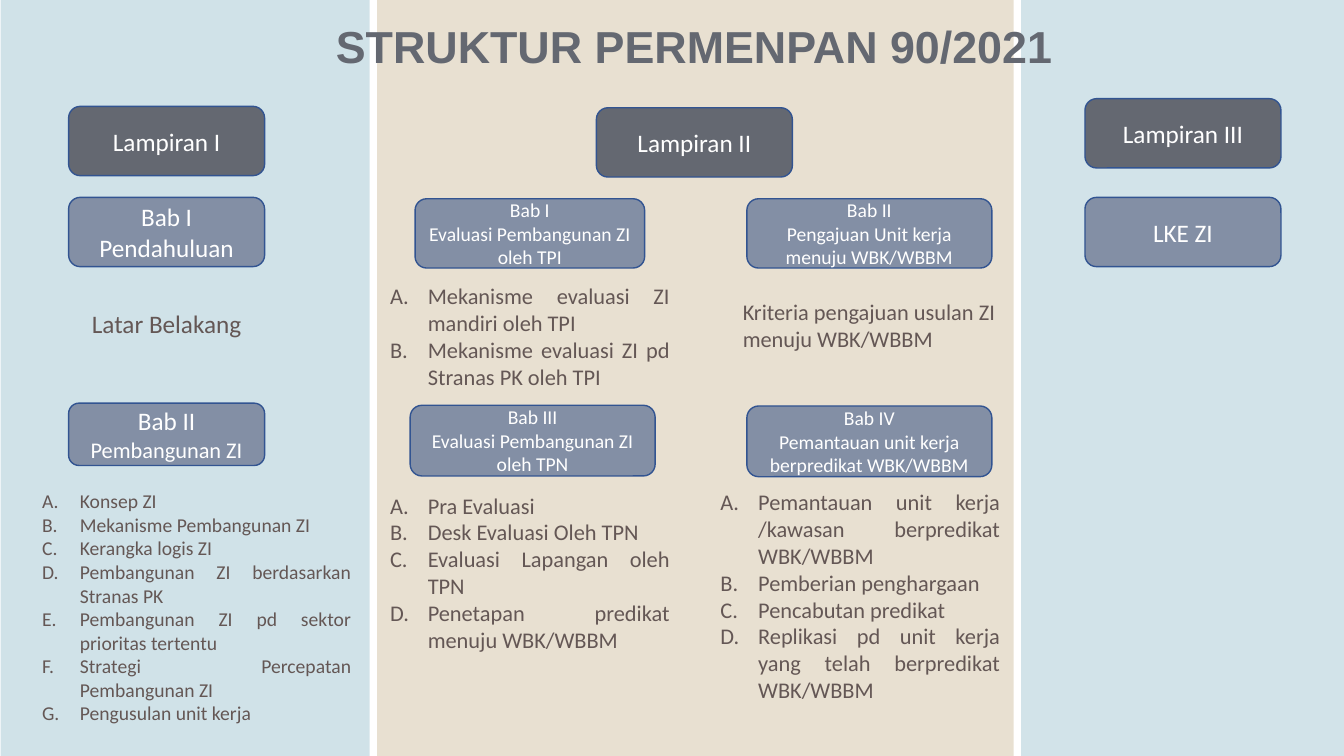
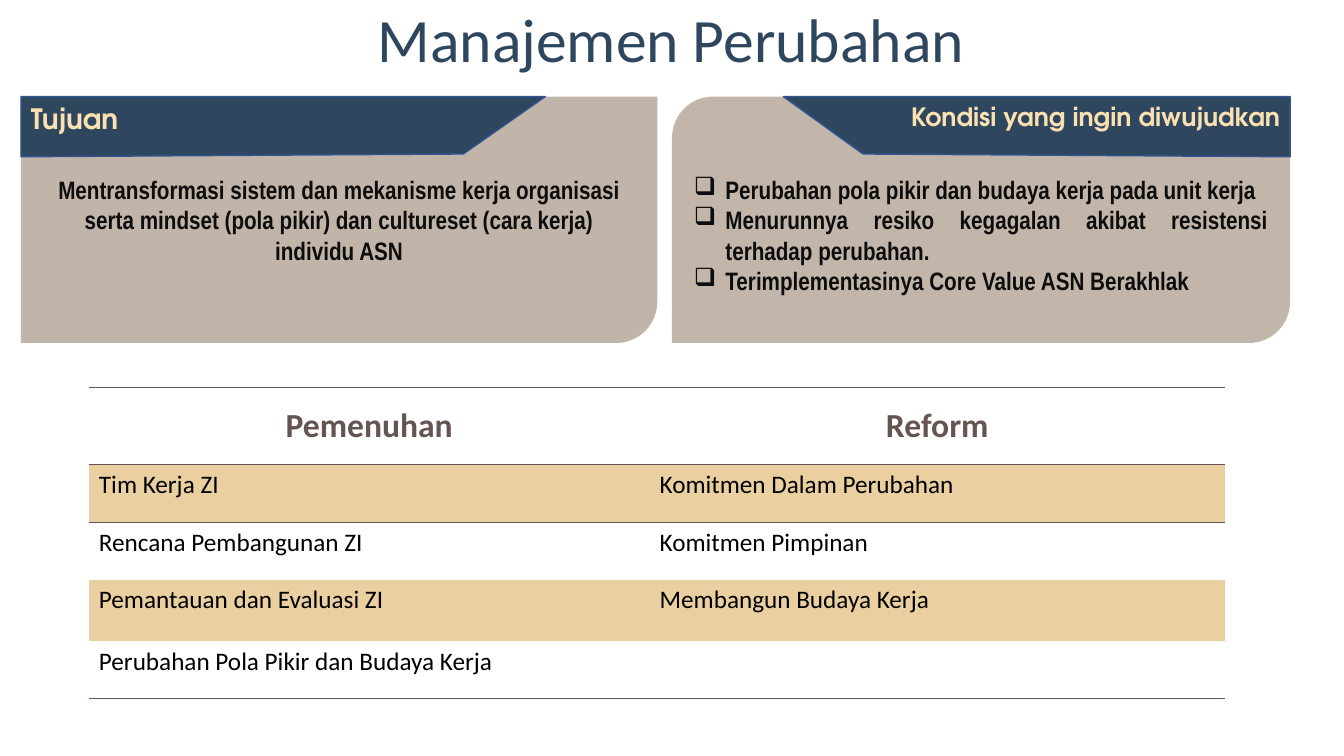
from lxml.etree import SubElement
from pptx import Presentation
from pptx.dml.color import RGBColor
from pptx.enum.shapes import MSO_SHAPE as Shape
from pptx.enum.text import MSO_ANCHOR as Anchor, PP_ALIGN as Align
from pptx.oxml.ns import qn
from pptx.util import Pt

WHITE = RGBColor(0xFF, 0xFF, 0xFF)
BLACK = RGBColor(0x00, 0x00, 0x00)
INK = RGBColor(0x0D, 0x0D, 0x0D)
SLATE = RGBColor(0x64, 0x68, 0x71)
STEEL = RGBColor(0x83, 0x8F, 0xA5)
NAVY = RGBColor(0x2E, 0x47, 0x5E)
OUTLINE = RGBColor(0x32, 0x54, 0x91)
BROWN = RGBColor(0x64, 0x57, 0x55)
RULE = RGBColor(0x64, 0x55, 0x53)
SAND = RGBColor(0xC3, 0xAD, 0x84)
SKY = RGBColor(0x9D, 0xC3, 0xD0)
TAUPE = RGBColor(0x89, 0x70, 0x5C)
CREAM = RGBColor(0xFB, 0xE1, 0xB1)
GOLD = RGBColor(0xEA, 0xD0, 0xA0)

LETTERS = ("a:buAutoNum", {"type": "alphaUcPeriod"})
BOXES = ("a:buChar", {"char": "❑"})
PLAIN_TABLE = "{2D5ABB26-0587-4C30-8999-92F81FD0307C}"


def set_all(target, values):
    for name, value in values.items():
        setattr(target, name, value)


class Deck:
    def __init__(self):
        self.prs = Presentation()
        set_all(self.prs, {"slide_width": Pt(960), "slide_height": Pt(540)})
        self.shapes = None

    def new_slide(self):
        self.shapes = self.prs.slides.add_slide(self.prs.slide_layouts[6]).shapes

    def set_text(self, frame, paragraphs, size, color, font="Calibri", bold=False,
                 align=Align.CENTER, bullet=None, indent=27, spacing=None):
        """Fill a frame; a paragraph is a string or a list of (text, size) runs."""
        for number, content in enumerate(paragraphs):
            paragraph = frame.add_paragraph() if number else frame.paragraphs[0]
            set_all(paragraph, {"alignment": align, "line_spacing": spacing})
            if bullet:
                tag, attributes = bullet
                properties = paragraph._p.get_or_add_pPr()
                properties.set("marL", str(Pt(indent)))
                properties.set("indent", str(-Pt(indent)))
                SubElement(properties, qn(tag), attributes)
            runs = [(content, size)] if isinstance(content, str) else content
            for text, run_size in runs:
                run = paragraph.add_run()
                run.text = text
                set_all(run.font, {"size": Pt(run_size), "name": font, "bold": bold})
                run.font.color.rgb = color

    def text(self, box, paragraphs, size, color, wrap=True, anchor=Anchor.MIDDLE,
             **style):
        frame = self.shapes.add_textbox(*map(Pt, box)).text_frame
        set_all(frame, {"word_wrap": wrap, "vertical_anchor": anchor})
        self.set_text(frame, paragraphs, size, color, **style)

    def paint(self, shape, fill=None, opacity=None, line=None):
        shape.shadow.inherit = False
        if fill is None:
            shape.fill.background()
        else:
            shape.fill.solid()
            shape.fill.fore_color.rgb = fill
            if opacity:
                tint = shape.fill._xPr.find(".//" + qn("a:srgbClr"))
                SubElement(tint, qn("a:alpha"), val=str(opacity * 1000))
        if line is None:
            shape.line.fill.background()
        else:
            shape.line.color.rgb = line
            shape.line.width = Pt(1)

    def block(self, kind, box, fill=None, opacity=None, line=None):
        shape = self.shapes.add_shape(kind, *map(Pt, box))
        self.paint(shape, fill, opacity, line)
        set_all(shape.text_frame, {"word_wrap": True, "vertical_anchor": Anchor.MIDDLE})
        return shape.text_frame

    def pill(self, box, paragraphs, size=18, fill=STEEL):
        frame = self.block(Shape.ROUNDED_RECTANGLE, box, fill, line=OUTLINE)
        self.set_text(frame, paragraphs, size, WHITE)

    def banner(self, corners, label, size, align):
        start, *others = [tuple(map(Pt, corner)) for corner in corners]
        builder = self.shapes.build_freeform(*start)
        builder.add_line_segments(others, close=True)
        shape = builder.convert_to_shape()
        self.paint(shape, NAVY, line=OUTLINE)
        set_all(shape.text_frame, {"word_wrap": True, "vertical_anchor": Anchor.TOP})
        self.set_text(shape.text_frame, [label], size, CREAM, "TeX Gyre Adventor",
                      True, align)

    def rule(self, cell, side):
        edge = SubElement(cell._tc.get_or_add_tcPr(), qn("a:" + side), w=str(Pt(1)))
        fill = SubElement(edge, qn("a:solidFill"))
        SubElement(fill, qn("a:srgbClr"), val=str(RULE))

    def table(self, left, top, widths, heights, rows):
        """Header row, then rows with every other one filled."""
        table = self.shapes.add_table(len(rows), len(widths), Pt(left), Pt(top),
                                      Pt(sum(widths)), Pt(sum(heights))).table
        table._tbl.tblPr.find(qn("a:tableStyleId")).text = PLAIN_TABLE
        for column, width in zip(table.columns, widths):
            column.width = Pt(width)
        for r, (height, row) in enumerate(zip(heights, rows)):
            table.rows[r].height = Pt(height)
            for c, label in enumerate(row):
                cell = table.cell(r, c)
                if r < 2:
                    self.rule(cell, "lnT")
                if r in (0, 1, len(rows) - 1):
                    self.rule(cell, "lnB")
                if r % 2:
                    cell.fill.solid()
                    cell.fill.fore_color.rgb = GOLD
                else:
                    cell.fill.background()
                if r == 0:
                    cell.vertical_anchor = Anchor.MIDDLE
                    self.set_text(cell.text_frame, [label], 24, RULE, bold=True)
                elif label:
                    self.set_text(cell.text_frame, [label], 18, BLACK, align=Align.LEFT)


def structure_slide(deck):
    deck.new_slide()
    for left, width, color, opacity in [(269.5, 454.5, SAND, 37),
                                        (729.5, 230.5, SKY, 45),
                                        (0.5, 263.5, SKY, 47)]:
        deck.block(Shape.RECTANGLE, (left, 0, width, 540), color, opacity)
    deck.text((82, 4.5, 828, 61), ["STRUKTUR PERMENPAN 90/2021"], 32, SLATE,
              font="Arial", bold=True, spacing=0.9)

    for left, top, label in [(49, 76, "Lampiran I"), (426, 77, "Lampiran II"),
                             (775, 70.5, "Lampiran III")]:
        deck.pill((left, top, 140, 49.5), [label], fill=SLATE)
    deck.pill((49, 141, 140, 49.5), ["Bab I Pendahuluan"])
    deck.pill((775, 141, 140, 49.5), ["LKE ZI"])
    background = deck.block(Shape.ROUNDED_RECTANGLE, (49, 206, 140, 49.5))
    deck.set_text(background, ["Latar Belakang"], 18, BROWN)
    deck.pill((49, 288, 140, 44.5), [[("Bab II ", 18), ("Pembangunan ZI", 16)]])

    chapters = [
        ((296.5, 142, 164, 49.5), "Bab I", "Evaluasi Pembangunan ZI oleh TPI"),
        ((533.5, 142, 175, 49.5), "Bab II", "Pengajuan Unit kerja menuju WBK/WBBM"),
        ((293, 289.5, 175, 50.5), "Bab III", "Evaluasi Pembangunan ZI oleh TPN"),
        ((533.5, 290, 175, 50.5), "Bab IV",
         "Pemantauan unit kerja berpredikat WBK/WBBM"),
    ]
    for box, chapter, subject in chapters:
        deck.pill(box, [chapter, subject], 14)

    contents = [
        ((23, 338.5, 235, 190), 14, LETTERS,
         ["Konsep ZI", "Mekanisme Pembangunan ZI", "Kerangka logis ZI",
          "Pembangunan ZI berdasarkan Stranas PK",
          "Pembangunan ZI pd sektor prioritas tertentu",
          "Strategi Percepatan Pembangunan ZI", "Pengusulan unit kerja"]),
        ((271.5, 215.5, 214, 49.5), 16, LETTERS,
         ["Mekanisme evaluasi ZI mandiri oleh TPI",
          "Mekanisme evaluasi ZI pd Stranas PK oleh TPI"]),
        ((271.5, 340, 214, 137.5), 16, LETTERS,
         ["Pra Evaluasi", "Desk Evaluasi Oleh TPN", "Evaluasi Lapangan oleh TPN",
          "Penetapan predikat menuju WBK/WBBM"]),
        ((507.5, 338.5, 214, 174), 16, LETTERS,
         ["Pemantauan unit kerja /kawasan berpredikat WBK/WBBM",
          "Pemberian penghargaan", "Pencabutan predikat",
          "Replikasi pd unit kerja yang telah berpredikat WBK/WBBM"]),
        ((523.5, 207.5, 194.5, 49.5), 16, None,
         ["Kriteria pengajuan usulan ZI menuju WBK/WBBM"]),
    ]
    for box, size, bullet, items in contents:
        deck.text(box, items, size, BROWN, align=Align.JUSTIFY, bullet=bullet)


def change_slide(deck):
    deck.new_slide()
    card_text = {"size": 18, "color": INK, "font": "Arial Narrow", "bold": True}
    goal = deck.block(Shape.ROUND_2_DIAG_RECTANGLE, (15, 69, 454.5, 176), TAUPE, 52)
    deck.set_text(goal, ["Mentransformasi sistem dan mekanisme kerja organisasi serta "
                         "mindset (pola pikir) dan cultureset (cara kerja) "
                         "individu ASN"], **card_text)
    outcome = deck.block(Shape.ROUND_2_DIAG_RECTANGLE, (480, 69, 441.5, 176), TAUPE, 51)
    outcome.margin_top = Pt(25)
    deck.set_text(outcome, ["Perubahan pola pikir dan budaya kerja pada unit kerja",
                            "Menurunnya resiko kegagalan akibat resistensi terhadap "
                            "perubahan.",
                            "Terimplementasinya Core Value ASN Berakhlak"],
                  align=Align.JUSTIFY, bullet=BOXES, indent=22.5, **card_text)

    deck.banner([(15, 69), (389.5, 69), (331, 110), (15, 112)],
                "Tujuan", 20, Align.JUSTIFY)
    deck.banner([(921.5, 69), (559.5, 69), (616.5, 110), (921.5, 112)],
                "Kondisi yang ingin diwujudkan", 18, Align.RIGHT)
    deck.text((260.5, -3, 438, 60.5), ["Manajemen Perubahan"], 44, NAVY,
              wrap=False, anchor=Anchor.TOP)

    deck.table(63.5, 277, (400.5, 411), (55, 41, 41, 44, 41), [
        ("Pemenuhan", "Reform"),
        ("Tim Kerja ZI", "Komitmen Dalam Perubahan"),
        ("Rencana Pembangunan ZI", "Komitmen Pimpinan"),
        ("Pemantauan dan Evaluasi ZI", "Membangun Budaya Kerja"),
        ("Perubahan Pola Pikir dan Budaya Kerja", ""),
    ])


def main():
    deck = Deck()
    structure_slide(deck)
    change_slide(deck)
    deck.prs.save("out.pptx")


if __name__ == "__main__":
    main()
